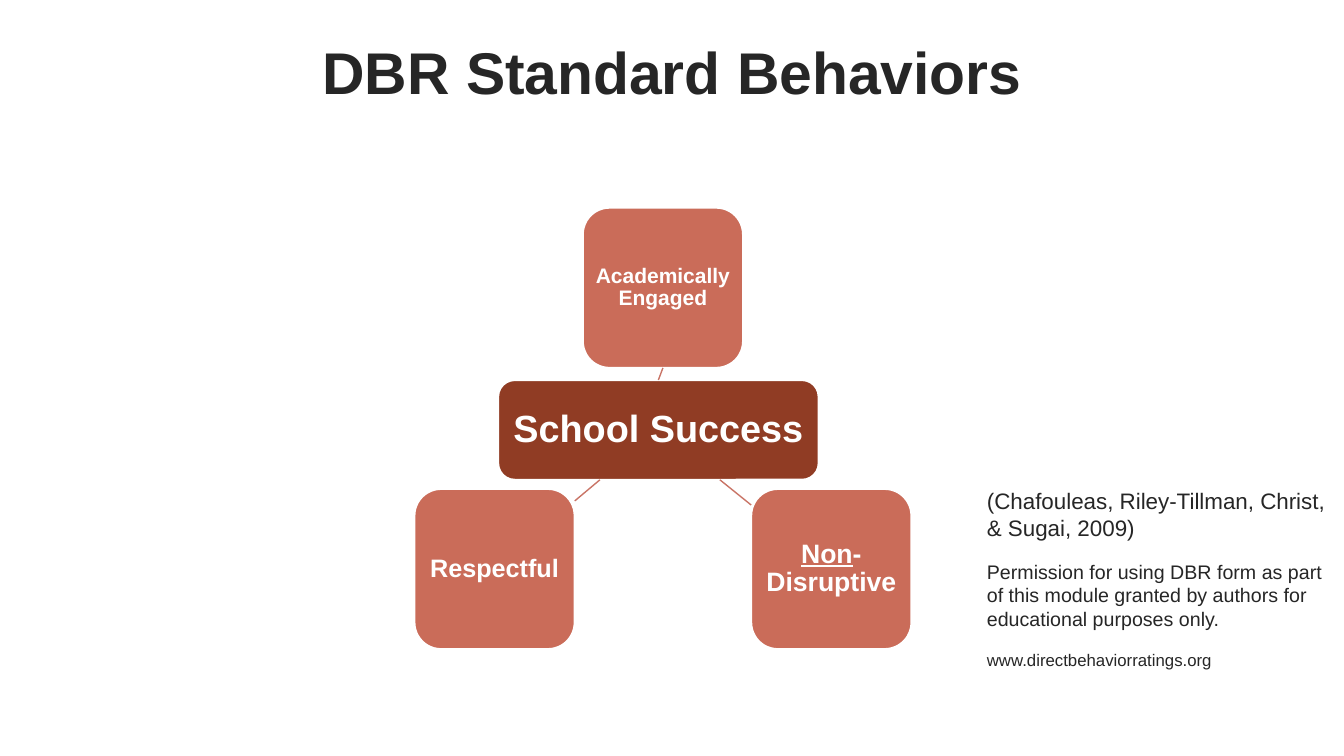
from lxml.etree import SubElement
from pptx import Presentation
from pptx.dml.color import RGBColor
from pptx.enum.shapes import MSO_CONNECTOR as Connector, MSO_SHAPE as Shape
from pptx.enum.text import MSO_ANCHOR as Anchor, PP_ALIGN as Align
from pptx.oxml.ns import qn
from pptx.util import Inches, Pt

COLORS = {"ink": "262626", "white": "FFFFFF", "core": "903C24",
          "behavior": "CA6C59", "link": "C97466"}
TOP, BOTTOM = 0, 2


def color(name):
    return RGBColor.from_string(COLORS[name])


def add_text(paragraph, text, size, ink="ink", bold=False, underline=False):
    run = paragraph.add_run()
    run.text = text
    font = run.font
    font.name, font.size = "Arial", Pt(size)
    font.bold, font.underline = bold, underline
    font.color.rgb = color(ink)


class BehaviorSlide:
    def __init__(self, deck):
        self.slide = deck.slides.add_slide(deck.slide_layouts[6])

    def frame(self, left, top, width, height, margin_x=0.1, margin_y=0.05):
        box = self.slide.shapes.add_textbox(
            Inches(left), Inches(top), Inches(width), Inches(height))
        return self.fit(box, margin_x, margin_y)

    def fit(self, box, margin_x, margin_y):
        frame = box.text_frame
        frame.word_wrap = True
        frame.margin_left = frame.margin_right = Inches(margin_x)
        frame.margin_top = frame.margin_bottom = Inches(margin_y)
        return frame

    def title(self, text):
        frame = self.frame(0.5, 0, 12.33, 1.4, 0, 0)
        frame.vertical_anchor = Anchor.MIDDLE
        frame.paragraphs[0].alignment = Align.CENTER
        add_text(frame.paragraphs[0], text, 42, bold=True)

    def node(self, left, top, width, height, fill, size, *pieces):
        """Add a rounded box; each piece is (text, underlined)."""
        box = self.slide.shapes.add_shape(
            Shape.ROUNDED_RECTANGLE,
            Inches(left), Inches(top), Inches(width), Inches(height))
        box.shadow.inherit = False
        box.fill.solid()
        box.fill.fore_color.rgb = color(fill)
        box.line.color.rgb = color("white")
        box.line.width = Pt(1.5)
        frame = self.fit(box, 0.04, 0.04)
        frame.vertical_anchor = Anchor.MIDDLE
        label = frame.paragraphs[0]
        label.alignment, label.line_spacing = Align.CENTER, 0.9
        for text, underlined in pieces:
            add_text(label, text, size, "white", bold=True, underline=underlined)
        return box

    def link(self, x1, y1, x2, y2):
        line = self.slide.shapes.add_connector(
            Connector.STRAIGHT, Inches(x1), Inches(y1), Inches(x2), Inches(y2))
        line.line.color.rgb = color("link")
        line.line.width = Pt(1)
        SubElement(line._element.spPr, qn("a:effectLst"))
        return line

    def citation(self, left, top, width, height, entries):
        frame = self.frame(left, top, width, height)
        for index, (text, size) in enumerate(entries):
            entry = frame.paragraphs[0] if index == 0 else frame.add_paragraph()
            if index:
                entry.space_before = Pt(13.8)
            add_text(entry, text, size)


def main():
    deck = Presentation()
    deck.slide_width, deck.slide_height = Inches(13.33), Inches(7.5)
    page = BehaviorSlide(deck)
    page.title("DBR Standard Behaviors")

    success = page.node(4.94, 3.77, 3.18, 0.99, "core", 27, ("School Success", False))
    behaviors = [
        (5.78, 2.06, 15, [("Academically Engaged", False)]),
        (7.45, 4.85, 19, [("Non", True), ("-Disruptive", False)]),
        (4.11, 4.85, 18, [("Respectful", False)]),
    ]
    engaged, *_ = [page.node(left, top, 1.59, 1.59, "behavior", size, *pieces)
                   for left, top, size, pieces in behaviors]

    engaged_link = page.link(6.53, 3.77, 6.57, 3.65)
    engaged_link.begin_connect(success, TOP)
    engaged_link.end_connect(engaged, BOTTOM)
    page.link(7.14, 4.76, 7.45, 5.01)
    page.link(5.95, 4.76, 5.7, 4.97)

    page.citation(9.69, 4.78, 3.64, 2.22, [
        ("(Chafouleas, Riley-Tillman, Christ, & Sugai, 2009)", 16),
        ("Permission for using DBR form as part of this module granted by "
         "authors for educational purposes only.", 14),
        ("www.directbehaviorratings.org", 12),
    ])
    deck.save("out.pptx")


if __name__ == "__main__":
    main()
